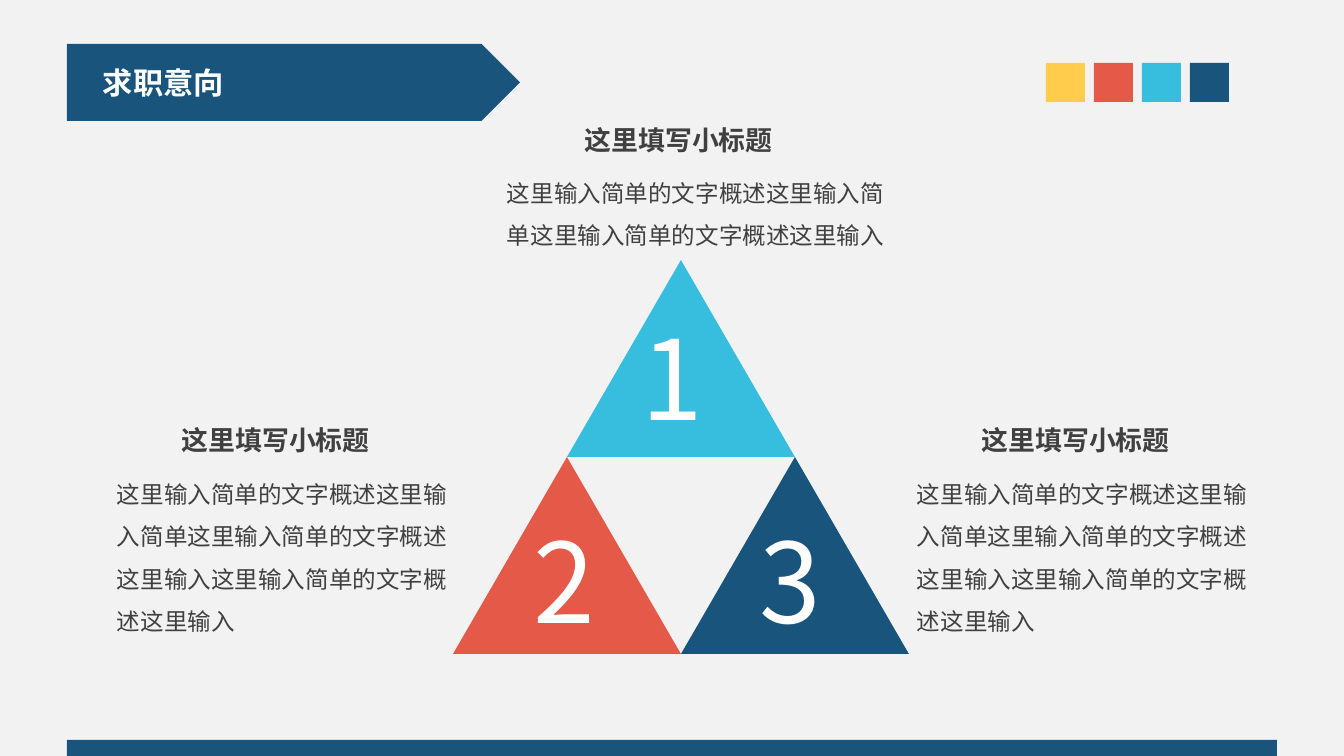
from lxml import etree
from pptx import Presentation
from pptx import util as u
from pptx.dml.color import RGBColor
from pptx.enum import shapes, text
from pptx.oxml.ns import qn

PX = 7557  # EMU in one px, 121 px to the inch
COLORS = {
    "back": "F2F2F2", "navy": "19547C", "yellow": "FFCC4C", "red": "E55948",
    "cyan": "37BEDE", "ink": "404040", "white": "FFFFFF",
}
HEAD_FONT, BODY_FONT = "Noto Sans CJK SC", "Calibri"
SHAPE = shapes.MSO_SHAPE
TRI_W, TRI_H = 228, 197

SUBTITLE = "这里填写小标题"
SHORT_NOTE = "这里输入简单的文字概述这里输入简单这里输入简单的文字概述这里输入"
LONG_NOTE = SHORT_NOTE + "这里输入简单的文字概述这里输入"

# number, colour, triangle left and top, digit left and top
TRIANGLES = [
    ("1", "cyan", (567, 260), (630, 304)),
    ("2", "red", (453, 457), (522, 507)),
    ("3", "navy", (681, 457), (748, 507)),
]
# note, subtitle box, note box
NOTES = [
    (SHORT_NOTE, (569, 121, 246, 44), (491, 157, 411, 102)),
    (LONG_NOTE, (166, 421, 292, 44), (101, 458, 369, 188)),
    (LONG_NOTE, (966, 421, 292, 44), (901, 458, 369, 188)),
]


def px(*lengths):
    return [u.Emu(n * PX) for n in lengths]


def rgb(name):
    return RGBColor.from_string(COLORS[name])


def add_block(s, kind, box, color):
    sp = s.shapes.add_shape(kind, *px(*box))
    sp.shadow.inherit = False
    sp.fill.solid()
    sp.fill.fore_color.rgb = rgb(color)
    sp.line.fill.background()
    return sp


def set_text(sp, words, size, color, font=HEAD_FONT, bold=False, inset=(12, 6)):
    """Fill a shape with one formatted paragraph and return that paragraph."""
    tf = sp.text_frame
    tf.word_wrap = True
    tf.auto_size = text.MSO_AUTO_SIZE.NONE
    tf.vertical_anchor = text.MSO_ANCHOR.TOP
    tf.margin_left, tf.margin_top = tf.margin_right, tf.margin_bottom = px(*inset)
    p = tf.paragraphs[0]
    p.text = words
    p.alignment = text.PP_ALIGN.LEFT
    p.font.size = u.Pt(size)
    p.font.bold = bold
    p.font.name = font
    p.font.color.rgb = rgb(color)
    if font == HEAD_FONT:
        latin = p._p.pPr.find(qn("a:defRPr")).find(qn("a:latin"))
        latin.addnext(etree.Element(qn("a:ea"), typeface=font))
    return p


def add_text(s, box, *args, **kwargs):
    return set_text(s.shapes.add_textbox(*px(*box)), *args, **kwargs)


def add_title(s, words):
    add_block(s, SHAPE.PENTAGON, (67, 44, 453, 77), "navy")
    title = s.shapes.title
    title.left, title.top, title.width, title.height = px(91, 58, 146, 48)
    set_text(title, words, 18, "white", bold=True)
    s.shapes.element.append(title.element)  # in front of the banner


def add_note(s, note, subtitle_box, note_box):
    p = add_text(s, note_box, note, 14, "ink", font=BODY_FONT, inset=(16, 8))
    p.line_spacing = 1.5
    p = add_text(s, subtitle_box, SUBTITLE, 16, "ink", bold=True, inset=(16, 8))
    p.alignment = text.PP_ALIGN.JUSTIFY
    p.line_spacing = u.Pt(16)


def add_triangle(s, number, color, corner, digit_corner):
    add_block(s, SHAPE.ISOSCELES_TRIANGLE, (*corner, TRI_W, TRI_H), color)
    add_text(s, (*digit_corner, 97, 146), number, 66, "white")


def main():
    prs = Presentation()
    prs.slide_width, prs.slide_height = px(1344, 756)
    s = prs.slides.add_slide(prs.slide_layouts.get_by_name("Title Only"))
    s.background.fill.solid()
    s.background.fill.fore_color.rgb = rgb("back")

    add_title(s, "求职意向")
    add_block(s, SHAPE.RECTANGLE, (67, 740, 1210, 16), "navy")
    for i, color in enumerate(("yellow", "red", "cyan", "navy")):
        add_block(s, SHAPE.RECTANGLE, (1046 + 48 * i, 63, 39, 39), color)
    for triangle in TRIANGLES:
        add_triangle(s, *triangle)
    for note in NOTES:
        add_note(s, *note)
    prs.save("out.pptx")


if __name__ == "__main__":
    main()
